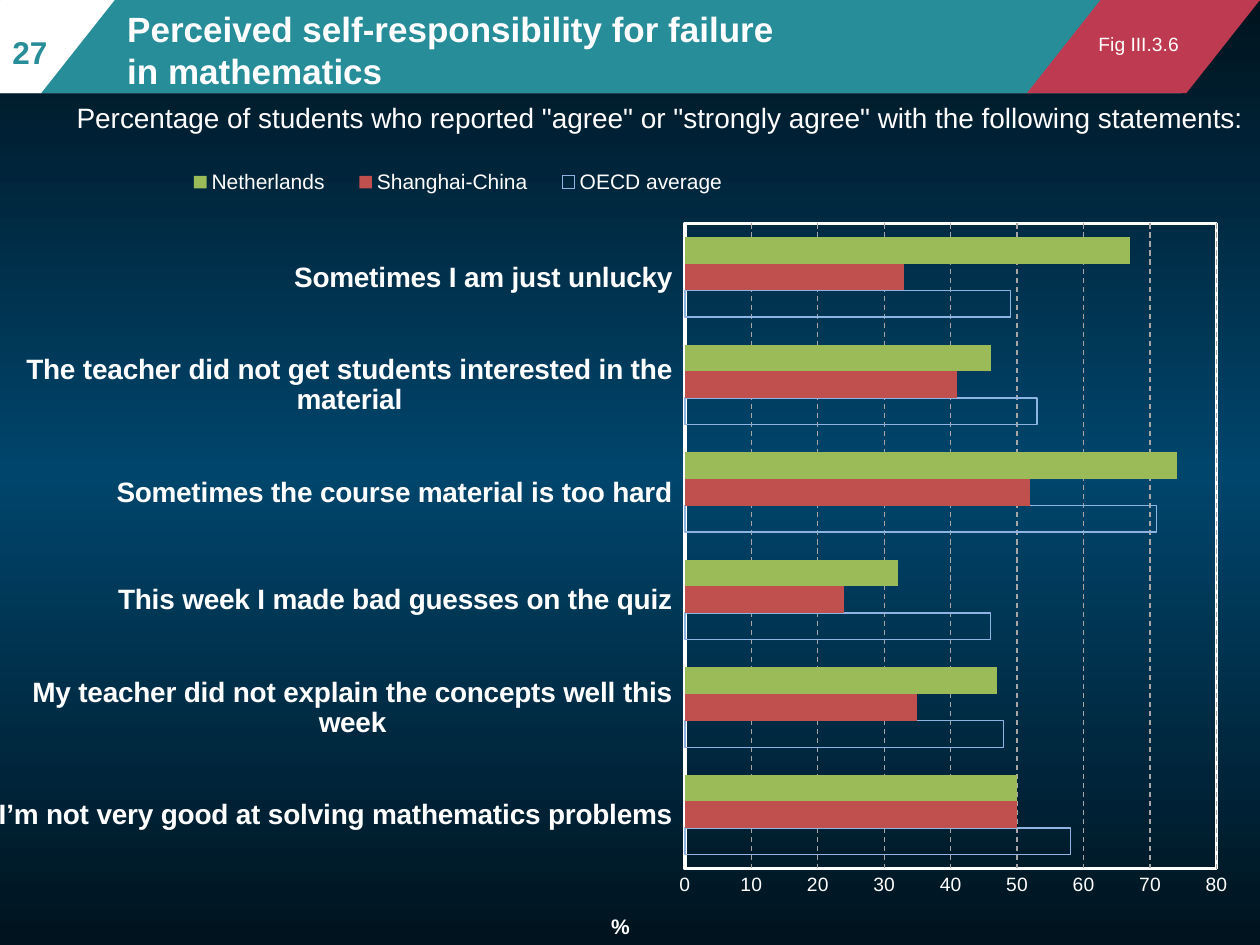
import copy
import pptx
import pptx.util
import pptx.chart.data
import pptx.dml.color
import pptx.enum.chart
import pptx.enum.dml
import pptx.enum.shapes
import pptx.enum.text
import pptx.oxml
import pptx.oxml.ns

Inches = pptx.util.Inches
Pt = pptx.util.Pt
qn = pptx.oxml.ns.qn

COLORS = {
    "white": "FFFFFF", "teal": "278D99", "red": "BE3A50", "night": "00131E",
    "sea": "00456C", "grid": "A6A6A6", "outline": "8EB4E3",
    "brick": "C0504D", "green": "9BBB59",
}
FONT = "Arial"
HEADER_HEIGHT = 0.74
TITLE = "Perceived self-responsibility for failure in mathematics"
BANDS = [(-0.2, 10.16, "white"), (-0.59, 9.37, "teal"),
         (-0.58, 1.49, "white"), (8.15, 1.85, "red")]
LABELS = [
    ('Percentage of students who reported "agree" or "strongly agree" '
     'with the following statements:', (0.51, 0.75, 9.64, 0.64), 16, "white", False),
    ("Fig III.3.6", (8.62, 0.21, 1.1, 0.41), 11, "white", False),
    ("27", (0, 0.21, 0.75, 0.4), 18, "teal", True),
]
STATEMENTS = [
    "I’m not very good at solving mathematics problems",
    "My teacher did not explain the concepts well this week",
    "This week I made bad guesses on the quiz",
    "Sometimes the course material is too hard",
    "The teacher did not get students interested in the material",
    "Sometimes I am just unlucky",
]
SERIES = [
    ("OECD average", (58, 48, 46, 71, 53, 49), None),
    ("Shanghai-China", (50, 35, 24, 52, 41, 33), "brick"),
    ("Netherlands", (50, 47, 32, 74, 46, 67), "green"),
]


def color(name):
    return pptx.dml.color.RGBColor.from_string(COLORS[name])


def style_font(font, size, name="white", bold=False):
    font.name = FONT
    font.size = Pt(size)
    font.bold = bold
    font.color.rgb = color(name)


def write(frame, text, size, name, bold):
    frame.word_wrap = True
    span = frame.paragraphs[0].add_run()
    span.text = text
    style_font(span.font, size, name, bold)


def place(parent, index, x, y, width=None, height=None, inner=False):
    for old in parent.findall(qn("c:layout")):
        parent.remove(old)
    values = [("layoutTarget", "inner")] if inner else []
    values += [("xMode", "edge"), ("yMode", "edge"), ("x", x), ("y", y)]
    if width:
        values += [("w", width), ("h", height)]
    body = "".join(f'<c:{tag} val="{value}"/>' for tag, value in values)
    parent.insert(index, pptx.oxml.parse_xml(
        f'<c:layout {pptx.oxml.ns.nsdecls("c")}>'
        f"<c:manualLayout>{body}</c:manualLayout></c:layout>"))


def paint_background(page):
    fill = page.background.fill
    fill.gradient()
    fill.gradient_angle = 90
    first, last = fill.gradient_stops
    for stop, position, name in ((first, 0, "night"), (last, 1, "night")):
        stop.color.rgb = color(name)
        stop.position = position
    stop_list = page.background._cSld.find(".//" + qn("a:gsLst"))
    middle = copy.deepcopy(stop_list[0])
    middle.set("pos", "50000")
    middle.find(qn("a:srgbClr")).set("val", COLORS["sea"])
    stop_list.insert(1, middle)


def add_band(page, left, width, name):
    band = page.shapes.add_shape(
        pptx.enum.shapes.MSO_SHAPE.PARALLELOGRAM,
        Inches(left), 0, Inches(width), Inches(HEADER_HEIGHT))
    band.adjustments[0] = 0.79
    band.shadow.inherit = False
    band.fill.solid()
    band.fill.fore_color.rgb = color(name)
    band.line.fill.background()


def add_bar_chart(page):
    data = pptx.chart.data.CategoryChartData()
    data.categories = STATEMENTS
    for name, values, _ in SERIES:
        data.add_series(name, values)
    chart = page.shapes.add_chart(
        pptx.enum.chart.XL_CHART_TYPE.BAR_CLUSTERED,
        Inches(-0.12), Inches(0.92), Inches(10.29), Inches(6.58), data).chart
    chart.has_title = False
    style_font(chart.font, 14)

    plot = chart.plots[0]
    plot.gap_width = 104
    plot.overlap = 0
    plot.vary_by_categories = False
    for series, (_, _, name) in zip(plot.series, SERIES):
        series.invert_if_negative = False
        if name:
            series.format.fill.solid()
            series.format.fill.fore_color.rgb = color(name)
        else:
            series.format.fill.background()
            series.format.line.color.rgb = color("outline")
            series.format.line.width = Pt(0.75)

    statements, percent = chart.category_axis, chart.value_axis
    for axis, size, bold in ((statements, 16, True), (percent, 11, False)):
        axis.major_tick_mark = pptx.enum.chart.XL_TICK_MARK.NONE
        axis.minor_tick_mark = pptx.enum.chart.XL_TICK_MARK.NONE
        axis.format.line.color.rgb = color("white")
        style_font(axis.tick_labels.font, size, bold=bold)
    statements.tick_label_position = pptx.enum.chart.XL_TICK_LABEL_POSITION.LOW
    percent.minimum_scale, percent.maximum_scale, percent.major_unit = 0, 80, 10
    percent.tick_labels.number_format = "0;0"
    percent.tick_labels.number_format_is_linked = False
    percent.has_major_gridlines = True
    grid = percent.major_gridlines.format.line
    grid.color.rgb = color("grid")
    grid.width = Pt(0.75)
    grid.dash_style = pptx.enum.dml.MSO_LINE.DASH
    write(percent.axis_title.text_frame, "%", 12, "white", True)
    place(percent.axis_title._element, 1, 0.48, 0.96)

    chart.has_legend = True
    chart.legend.position = pptx.enum.chart.XL_LEGEND_POSITION.TOP
    chart.legend.include_in_layout = False
    style_font(chart.legend.font, 12)
    place(chart.legend._element, 1, 0.14, 0.05, 0.45, 0.06)

    area = chart._chartSpace.chart.plotArea
    place(area, 0, 0.54, 0.13, 0.41, 0.78, inner=True)
    area.append(pptx.oxml.parse_xml(
        f'<c:spPr {pptx.oxml.ns.nsdecls("c", "a")}><a:noFill/><a:ln w="25400">'
        f'<a:solidFill><a:srgbClr val="{COLORS["white"]}"/></a:solidFill>'
        "</a:ln></c:spPr>"))


deck = pptx.Presentation()
deck.slide_width, deck.slide_height = Inches(10), Inches(7.5)
page = deck.slides.add_slide(deck.slide_layouts[5])
paint_background(page)
add_bar_chart(page)
for band in BANDS:
    add_band(page, *band)

title = page.shapes.title
title.left, title.top, title.width, title.height = map(Inches, (0.91, 0.05, 5.43, 0.68))
write(title.text_frame, TITLE, 20, "white", True)
title.text_frame.vertical_anchor = pptx.enum.text.MSO_ANCHOR.MIDDLE
title.text_frame.paragraphs[0].alignment = pptx.enum.text.PP_ALIGN.LEFT
page.shapes._spTree.append(title._element)

for text, frame, size, name, bold in LABELS:
    box = page.shapes.add_textbox(*map(Inches, frame))
    write(box.text_frame, text, size, name, bold)

deck.save("out.pptx")
